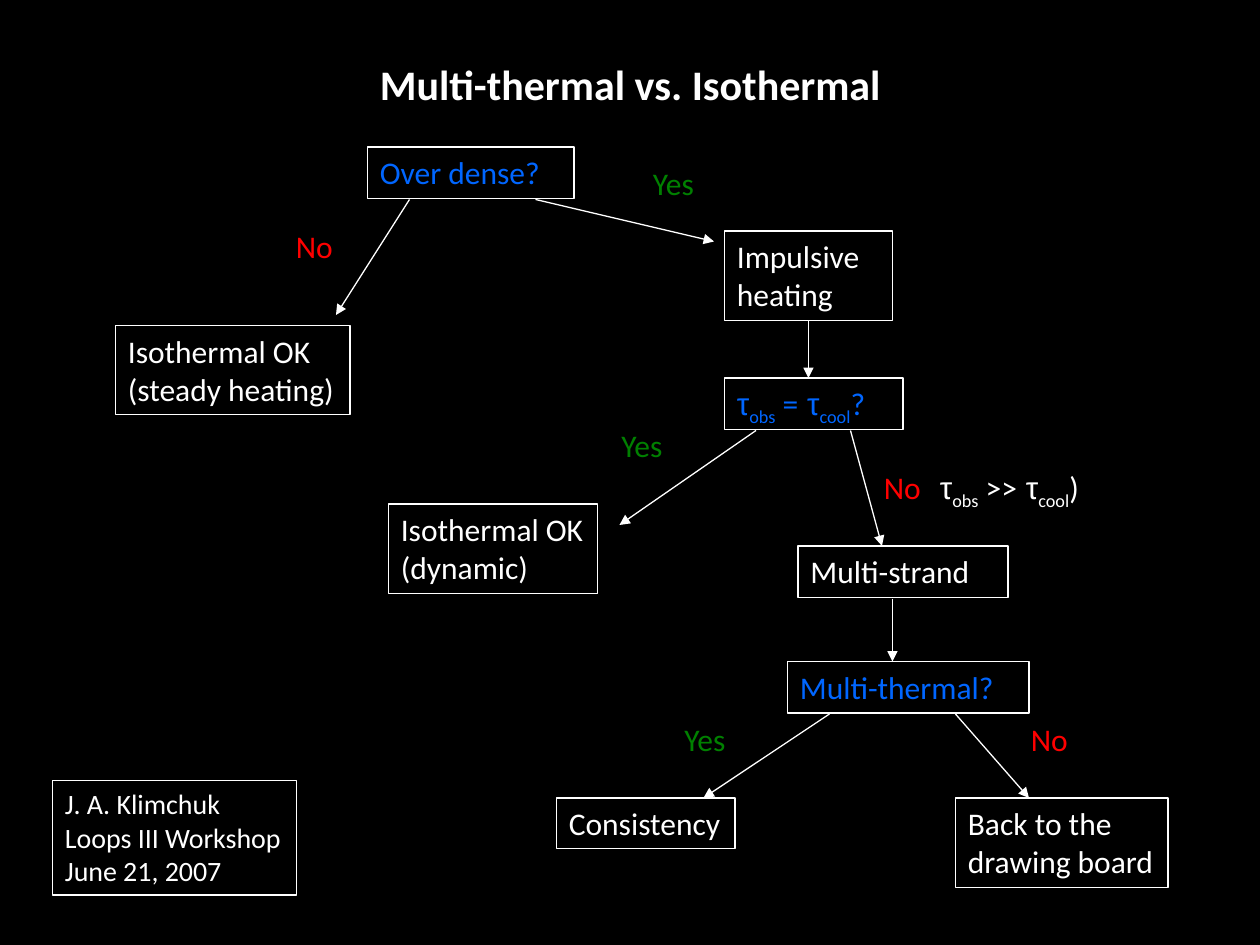
from dataclasses import dataclass
from typing import NamedTuple

from lxml import etree
from pptx import Presentation
from pptx import util as u
from pptx.dml.color import RGBColor
from pptx.enum import shapes, text
from pptx.oxml import ns


@dataclass(frozen=True)
class Theme:
    background: RGBColor = RGBColor(0, 0, 0)
    plain: RGBColor = RGBColor(255, 255, 255)
    question: RGBColor = RGBColor(0, 102, 255)
    yes: RGBColor = RGBColor(0, 128, 0)
    no: RGBColor = RGBColor(255, 0, 0)
    latin: str = "Calibri"
    greek: str = "Arial"
    title_size: float = 24
    body_size: float = 18
    credit_size: float = 16
    line_width: float = 0.75


THEME = Theme()


class Run(NamedTuple):
    text: str
    color: RGBColor = THEME.plain
    font: str = THEME.latin
    subscript: bool = False


class Block(NamedTuple):
    left: float
    top: float
    width: float
    height: float
    lines: list[list[Run]]
    size: float = THEME.body_size
    bold: bool = False
    boxed: bool = True
    wrap: bool = False


class Arrow(NamedTuple):
    start: tuple[float, float]
    end: tuple[float, float]
    source: str = ""


def lines(content: str, color: RGBColor = THEME.plain) -> list[list[Run]]:
    return [[Run(line, color)] for line in content.split("\n")]


def tau(subscript: str, color: RGBColor) -> list[Run]:
    return [Run("τ", color, THEME.greek), Run(subscript, color, subscript=True)]


def answer(left: float, top: float, yes: bool) -> Block:
    label, color, width = ("Yes", THEME.yes, 45) if yes else ("No", THEME.no, 37.5)
    return Block(left, top, width, 29, lines(label, color), boxed=False)


def comparison(sign: str, ending: str, color: RGBColor) -> list[list[Run]]:
    return [[*tau("obs", color), Run(f" {sign}", color), Run(" ", color, THEME.greek),
             *tau("cool", color), Run(ending, color)]]


BOXES = {
    "dense": Block(210, 84, 118, 29.5, lines("Over dense?", THEME.question)),
    "timescale": Block(414, 216, 102, 29.5, comparison("=", "?", THEME.question)),
    "steady": Block(66, 186, 134, 51, lines("Isothermal OK\n(steady heating)")),
    "dynamic": Block(222, 288, 119.5, 51, lines("Isothermal OK\n(dynamic)")),
    "strand": Block(456, 312, 120, 29.5, lines("Multi-strand"), wrap=True),
    "consistency": Block(318, 456, 102, 29, lines("Consistency")),
    "redo": Block(546, 456, 121.5, 51, lines("Back to the\ndrawing board")),
    "impulsive": Block(414, 132, 96, 51, lines("Impulsive\nheating"), wrap=True),
    "thermal": Block(450, 378, 138, 29.5, lines("Multi-thermal?", THEME.question), wrap=True),
    "credit": Block(30, 446, 139.5, 65.5,
                    lines("J. A. Klimchuk\nLoops III Workshop\nJune 21, 2007"),
                    THEME.credit_size),
}

LABELS = [
    Block(210, 30, 304, 36, lines("Multi-thermal vs. Isothermal"),
          THEME.title_size, bold=True, boxed=False),
    answer(498, 264, False),
    Block(530, 264, 94, 29, comparison(">>", ")", THEME.plain), boxed=False),
    answer(162, 126, False),
    answer(366, 90, True),
    answer(582, 408, False),
    answer(348, 240, True),
    answer(384, 408, True),
]

ARROWS = [
    Arrow((234, 114), (192, 180)),
    Arrow((306, 114), (408, 138)),
    Arrow((462, 186), (462, 216), "impulsive"),
    Arrow((432, 246), (354, 300)),
    Arrow((486, 246), (504, 312)),
    Arrow((510, 342), (510, 378)),
    Arrow((474, 408), (402, 456)),
    Arrow((546, 408), (588, 456)),
]


def apply(target, values: dict) -> None:
    for name, value in values.items():
        setattr(target, name, value)


def draw_line_style(line) -> None:
    line.color.rgb = THEME.plain
    line.width = u.Pt(THEME.line_width)


def draw_block(slide, block: Block):
    bounds = [u.Pt(value) for value in block[:4]]
    if block.boxed:
        shape = slide.shapes.add_shape(shapes.MSO_SHAPE.RECTANGLE, *bounds)
        shape.shadow.inherit = False
        shape.fill.background()
        draw_line_style(shape.line)
    else:
        shape = slide.shapes.add_textbox(*bounds)
    frame = shape.text_frame
    apply(frame, {
        "word_wrap": block.wrap,
        "auto_size": text.MSO_AUTO_SIZE.SHAPE_TO_FIT_TEXT,
        "vertical_anchor": text.MSO_ANCHOR.TOP,
    })
    for index, line in enumerate(block.lines):
        paragraph = frame.add_paragraph() if index else frame.paragraphs[0]
        paragraph.alignment = text.PP_ALIGN.LEFT
        for item in line:
            run = paragraph.add_run()
            run.text = item.text
            apply(run.font, {"name": item.font, "size": u.Pt(block.size), "bold": block.bold})
            run.font.color.rgb = item.color
            if item.subscript:
                run.font._element.set("baseline", "-25000")
    return shape


def draw_arrow(slide, arrow: Arrow, boxes: dict) -> None:
    points = [u.Pt(value) for value in (*arrow.start, *arrow.end)]
    connector = slide.shapes.add_connector(shapes.MSO_CONNECTOR.STRAIGHT, *points)
    draw_line_style(connector.line)
    if arrow.source:
        connector.begin_connect(boxes[arrow.source], 2)
    outline = connector.line._get_or_add_ln()
    etree.SubElement(outline, ns.qn("a:tailEnd"), type="triangle")
    etree.SubElement(connector._element.spPr, ns.qn("a:effectLst"))


def main() -> None:
    presentation = Presentation()
    apply(presentation, {"slide_width": u.Pt(720), "slide_height": u.Pt(540)})
    slide = presentation.slides.add_slide(presentation.slide_layouts[6])
    slide.background.fill.solid()
    slide.background.fill.fore_color.rgb = THEME.background
    boxes = {name: draw_block(slide, block) for name, block in BOXES.items()}
    for label in LABELS:
        draw_block(slide, label)
    for arrow in ARROWS:
        draw_arrow(slide, arrow, boxes)
    presentation.save("out.pptx")


if __name__ == "__main__":
    main()
